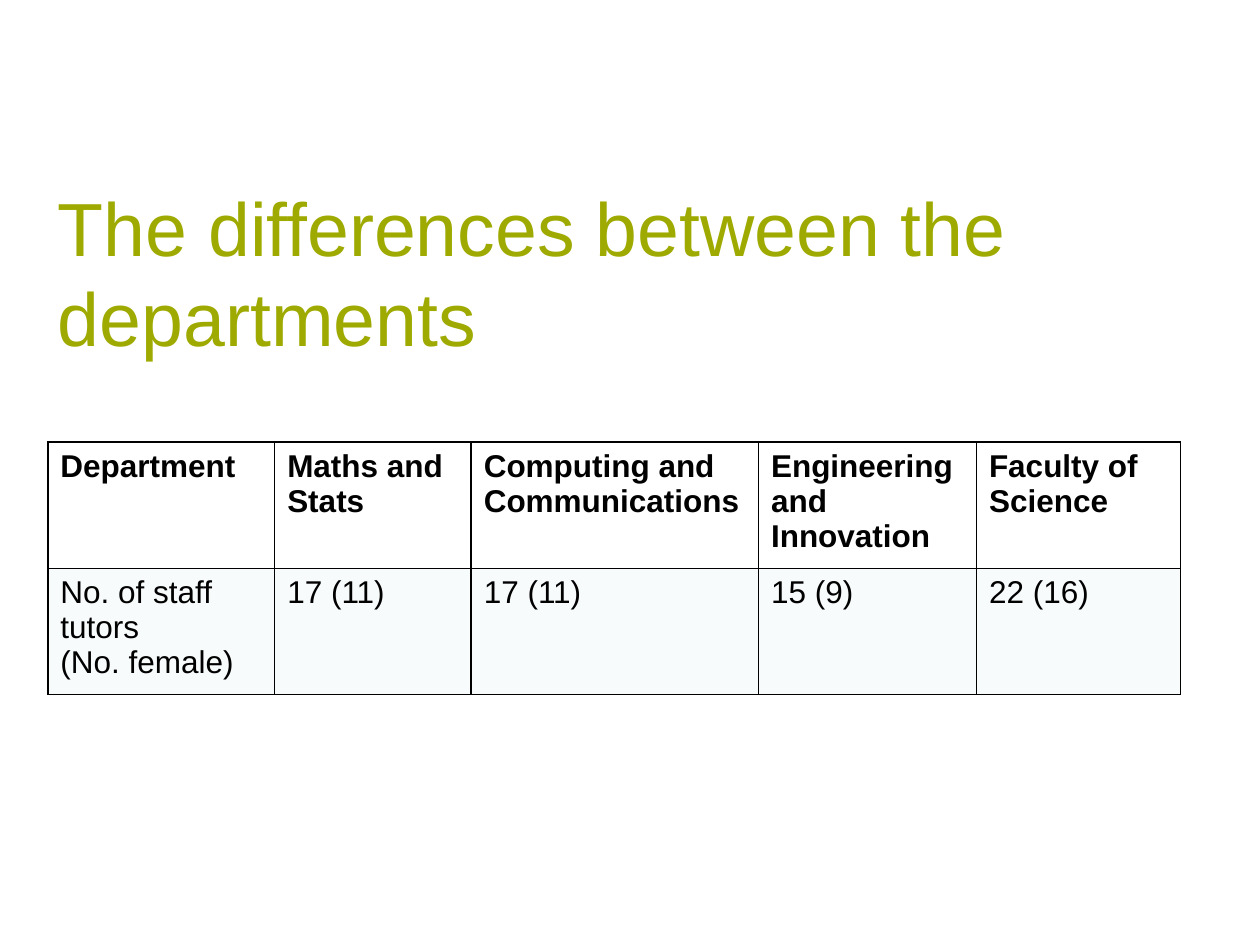
from dataclasses import dataclass

from lxml.etree import SubElement
from pptx import Presentation
from pptx.dml.color import RGBColor
from pptx.enum.text import MSO_ANCHOR
from pptx.oxml.ns import qn
from pptx.util import Inches, Pt


@dataclass(frozen=True)
class Theme:
    font: str = "Arial"
    title_color: str = "9FAA00"
    text_color: str = "000000"
    border_color: str = "000000"
    header_fill: str = "FFFFFF"
    body_fill: str = "F8FBFC"
    title_size: int = 43
    table_size: int = 18
    border_width: int = 1


THEME = Theme()

COLUMN_WIDTHS = [1.8, 1.56, 2.28, 1.73, 1.62]
ROW_HEIGHT = 0.94
STAFF_ROWS = [
    ["Department", "Maths and Stats", "Computing and Communications",
     "Engineering and Innovation", "Faculty of Science"],
    ["No. of staff tutors\n(No. female)", "17 (11)", "17 (11)", "15 (9)", "22 (16)"],
]


def write_text(frame, text, *, size, color, bold=False):
    """Fill a text frame, one paragraph for each line of text."""
    frame.word_wrap = True
    frame.text = text
    for paragraph in frame.paragraphs:
        font = paragraph.font
        font.name, font.size, font.bold = THEME.font, Pt(size), bold
        font.color.rgb = RGBColor.from_string(color)


def set_borders(cell):
    """Draw a solid line on all four sides; call before setting the fill."""
    properties = cell._tc.get_or_add_tcPr()
    for side in ("a:lnL", "a:lnR", "a:lnT", "a:lnB"):
        line = SubElement(properties, qn(side), w=str(Pt(THEME.border_width)))
        fill = SubElement(line, qn("a:solidFill"))
        SubElement(fill, qn("a:srgbClr"), val=THEME.border_color)


def add_title(slide, left, top, width, height, text):
    box = slide.shapes.add_textbox(Inches(left), Inches(top), Inches(width), Inches(height))
    frame = box.text_frame
    frame.vertical_anchor = MSO_ANCHOR.MIDDLE
    frame.margin_left = frame.margin_right = Inches(0.08)
    frame.margin_top = frame.margin_bottom = Inches(0.04)
    write_text(frame, text, size=THEME.title_size, color=THEME.title_color)


def add_staff_table(slide, left, top, rows):
    shape = slide.shapes.add_table(
        len(rows), len(COLUMN_WIDTHS), Inches(left), Inches(top),
        Inches(sum(COLUMN_WIDTHS)), Inches(ROW_HEIGHT * len(rows)))
    table = shape.table
    table.horz_banding = False
    for column, width in zip(table.columns, COLUMN_WIDTHS):
        column.width = Inches(width)
    for row_index, values in enumerate(rows):
        is_header = row_index == 0
        fill_color = THEME.header_fill if is_header else THEME.body_fill
        for column_index, text in enumerate(values):
            cell = table.cell(row_index, column_index)
            set_borders(cell)
            cell.fill.solid()
            cell.fill.fore_color.rgb = RGBColor.from_string(fill_color)
            write_text(cell.text_frame, text, size=THEME.table_size,
                       color=THEME.text_color, bold=is_header)


def main():
    presentation = Presentation()
    presentation.slide_width, presentation.slide_height = Inches(10), Inches(7.5)
    slide = presentation.slides.add_slide(presentation.slide_layouts[6])

    # Heading
    add_title(slide, 0.38, 1.39, 9, 1.53, "The differences between the departments")
    # Staff tutors by department
    add_staff_table(slide, 0.38, 3.51, STAFF_ROWS)

    presentation.save("out.pptx")


if __name__ == "__main__":
    main()
